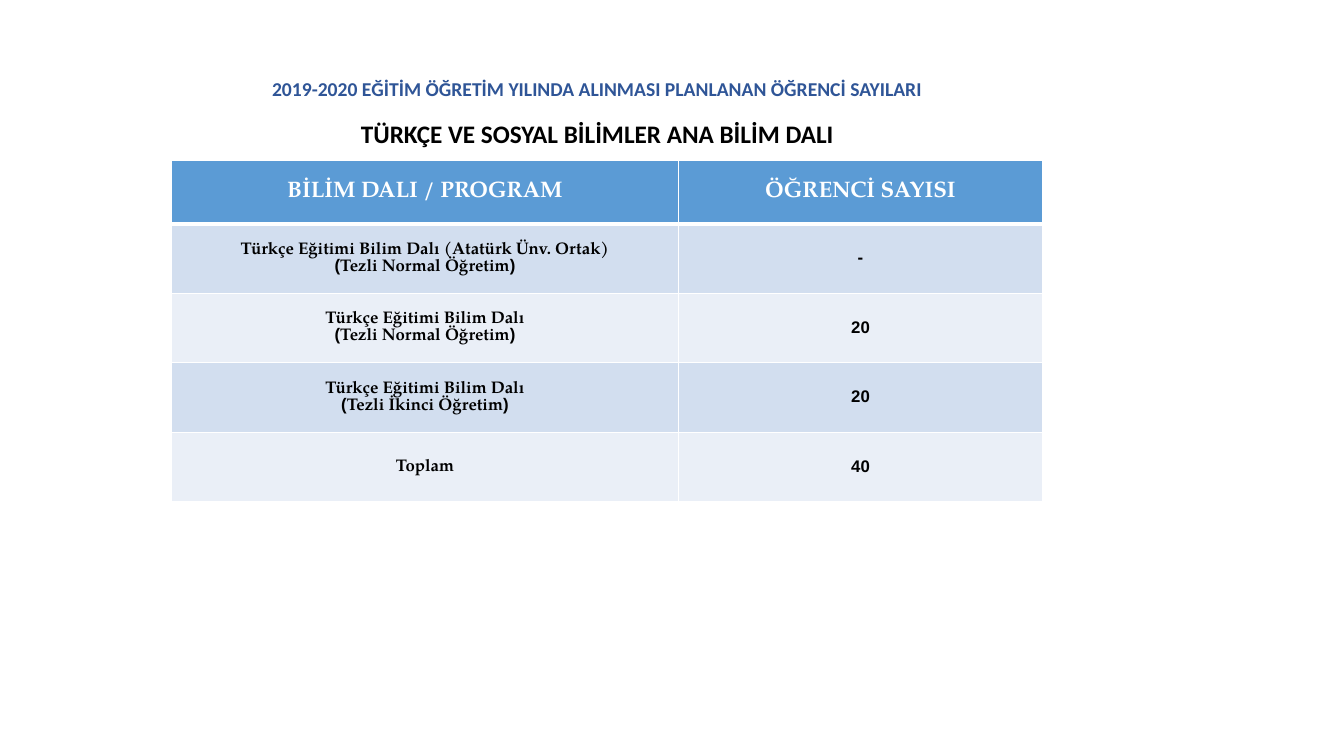
"""Build the slide of planned student numbers for 2019-2020."""
from lxml.etree import SubElement
from pptx import Presentation
from pptx.dml.color import RGBColor
from pptx.enum.text import MSO_ANCHOR, PP_ALIGN
from pptx.oxml.ns import qn
from pptx.util import Inches, Pt

HEADINGS = [
    ("2019-2020 EĞİTİM ÖĞRETİM YILINDA ALINMASI PLANLANAN ÖĞRENCİ SAYILARI",
     (2.4, 0.71, 7.05, 0.34), "title", True),
    ("TÜRKÇE VE SOSYAL BİLİMLER ANA BİLİM DALI",
     (3.42, 1.12, 5.01, 0.4), "department", False),
]
PROGRAMS = [
    ("BİLİM DALI / PROGRAM", "ÖĞRENCİ SAYISI"),
    ("Türkçe Eğitimi Bilim Dalı (Atatürk Ünv. Ortak)\n(Tezli Normal Öğretim)", "-"),
    ("Türkçe Eğitimi Bilim Dalı\n(Tezli Normal Öğretim)", "20"),
    ("Türkçe Eğitimi Bilim Dalı\n(Tezli İkinci Öğretim)", "20"),
    ("Toplam", "40"),
]
COLUMNS = (5.03, 3.61)
HEADER_HEIGHT, ROW_HEIGHT = 0.63, 0.69
TABLE_LEFT, TABLE_TOP = 1.7, 1.59
THEME = {
    "title": ("Calibri", 14, "2F5597"),
    "department": ("Calibri", 18, "000000"),
    "header": ("TeX Gyre Pagella", 16, "FFFFFF"),
    "body": ("TeX Gyre Pagella", 12, "000000"),
    "complex_font": "Arial",
    "header_fill": "5B9BD5",
    "bands": ("EAEFF7", "D2DEEF"),
    "border": "FFFFFF",
}


def style_text(tf, style):
    name, size, color = THEME[style]
    for p in tf.paragraphs:
        p.alignment = PP_ALIGN.CENTER
        for r in p.runs:
            r.font.name, r.font.size, r.font.bold = name, Pt(size), True
            r.font.color.rgb = RGBColor.from_string(color)


def set_right_to_left(tf):
    for p in tf.paragraphs:
        p._p.get_or_add_pPr().set("rtl", "1")
        for r in p.runs:
            SubElement(r._r.get_or_add_rPr(), qn("a:cs"), typeface=THEME["complex_font"])


def add_borders(cell, widths):
    tc_pr = cell._tc.get_or_add_tcPr()
    for index, (side, width) in enumerate(widths.items()):
        line = tc_pr.makeelement(qn(f"a:ln{side}"), {"w": str(Pt(width))})
        fill = SubElement(line, qn("a:solidFill"))
        SubElement(fill, qn("a:srgbClr"), val=THEME["border"])
        tc_pr.insert(index, line)


def add_heading(s, text, box, style, wrap):
    tf = s.shapes.add_textbox(*map(Inches, box)).text_frame
    tf.word_wrap = wrap
    tf.text = text
    style_text(tf, style)


def fill_cell(cell, text, row, column):
    header = row == 0
    tf = cell.text_frame
    tf.text = text
    style_text(tf, "header" if header else "body")
    for p in tf.paragraphs:
        p.line_spacing = 0.9
    if row or column:
        set_right_to_left(tf)
    cell.vertical_anchor = MSO_ANCHOR.MIDDLE
    cell.margin_left = cell.margin_right = Inches(0.15)
    cell.margin_top = cell.margin_bottom = Inches(0.05)
    cell.fill.solid()
    color = THEME["header_fill"] if header else THEME["bands"][row % 2]
    cell.fill.fore_color.rgb = RGBColor.from_string(color)
    add_borders(cell, {"L": 1, "R": 1, "T": 3 if row == 1 else 1, "B": 3 if header else 1})


def add_program_table(s):
    heights = [HEADER_HEIGHT] + [ROW_HEIGHT] * (len(PROGRAMS) - 1)
    box = (TABLE_LEFT, TABLE_TOP, sum(COLUMNS), sum(heights))
    table = s.shapes.add_table(len(PROGRAMS), len(COLUMNS), *map(Inches, box)).table
    for column, width in zip(table.columns, COLUMNS):
        column.width = Inches(width)
    for i, (height, texts) in enumerate(zip(heights, PROGRAMS)):
        table.rows[i].height = Inches(height)
        for j, text in enumerate(texts):
            fill_cell(table.cell(i, j), text, i, j)


def main():
    prs = Presentation()
    prs.slide_width, prs.slide_height = Inches(13.33), Inches(7.5)
    s = prs.slides.add_slide(prs.slide_layouts[6])
    for heading in HEADINGS:
        add_heading(s, *heading)
    add_program_table(s)
    prs.save("out.pptx")


if __name__ == "__main__":
    main()
